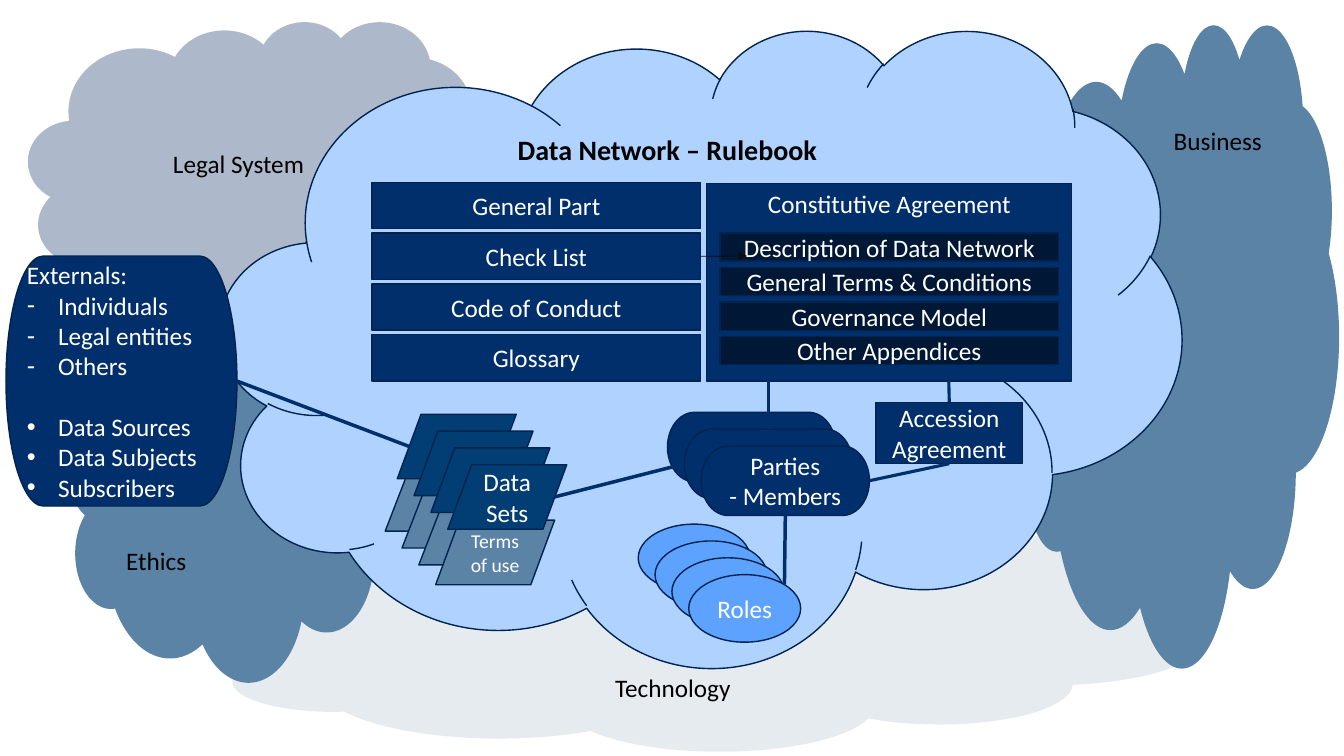
from lxml import etree
from pptx import Presentation
from pptx.dml.color import RGBColor
from pptx.enum.shapes import MSO_CONNECTOR, MSO_SHAPE
from pptx.enum.text import MSO_ANCHOR, MSO_AUTO_SIZE, PP_ALIGN
from pptx.oxml.ns import qn
from pptx.util import Inches, Pt

CLOUD, RECTANGLE, OVAL = MSO_SHAPE.CLOUD, MSO_SHAPE.RECTANGLE, MSO_SHAPE.OVAL
PROCESS, TERMINATOR = MSO_SHAPE.FLOWCHART_PROCESS, MSO_SHAPE.FLOWCHART_TERMINATOR
SHEET = MSO_SHAPE.FLOWCHART_DATA
STRAIGHT = MSO_CONNECTOR.STRAIGHT
TOP, MIDDLE, BOTTOM = MSO_ANCHOR.TOP, MSO_ANCHOR.MIDDLE, MSO_ANCHOR.BOTTOM
LEFT, CENTER, RIGHT = PP_ALIGN.LEFT, PP_ALIGN.CENTER, PP_ALIGN.RIGHT
NO_AUTOFIT = MSO_AUTO_SIZE.NONE
SIDE_TOP, SIDE_LEFT, SIDE_BOTTOM, SIDE_RIGHT = range(4)

BLACK = RGBColor(0x00, 0x00, 0x00)
WHITE = RGBColor(0xFF, 0xFF, 0xFF)
MIST = RGBColor(0xE6, 0xEB, 0xF0)
STEEL = RGBColor(0x5B, 0x83, 0xA6)
GREY_BLUE = RGBColor(0xAD, 0xB9, 0xCA)
SKY = RGBColor(0xAF, 0xD2, 0xFF)
BRIGHT_BLUE = RGBColor(0x5D, 0xA2, 0xFF)
NAVY = RGBColor(0x00, 0x2F, 0x6C)
DARK_NAVY = RGBColor(0x00, 0x17, 0x36)
SHEET_BLUE = RGBColor(0x02, 0x3E, 0x73)
OUTLINE = RGBColor(0x00, 0x23, 0x50)
ARROW = RGBColor(0x0D, 0x0D, 0x0D)

FONT = "Calibri"
STACK_SIZE, STACK_STEP = 4, 0.167


def set_attributes(target, values):
    """Set every named attribute on the target."""
    for name, value in values.items():
        setattr(target, name, value)


def write_text(shape, text, color=WHITE, size=18, align=CENTER, anchor=MIDDLE, bold=False):
    """Write one paragraph per line of text into the shape."""
    frame = shape.text_frame
    frame.text = text
    set_attributes(frame, {"word_wrap": True, "vertical_anchor": anchor})
    for paragraph in frame.paragraphs:
        paragraph.alignment = align
        set_attributes(paragraph.font, {"name": FONT, "size": Pt(size), "bold": bold})
        paragraph.font.color.rgb = color


def add_box(shapes, kind, box, fill, text="", outline=OUTLINE, **text_format):
    """Add a flat preset shape with optional text."""
    shape = shapes.add_shape(kind, *map(Inches, box))
    shape.shadow.inherit = False
    shape.fill.solid()
    shape.fill.fore_color.rgb = fill
    if outline is None:
        shape.line.fill.background()
    else:
        shape.line.color.rgb = outline
        shape.line.width = Pt(1)
    if text:
        write_text(shape, text, **text_format)
    return shape


def add_line(slide, start, end, begin=None, finish=None, color=NAVY, width=2.5):
    """Add a straight connector, joined to (shape, side) pairs where given."""
    line = slide.shapes.add_connector(STRAIGHT, *map(Inches, (*start, *end)))
    if begin:
        line.begin_connect(*begin)
    if finish:
        line.end_connect(*finish)
    line.line.color.rgb = color
    line.line.width = Pt(width)
    etree.SubElement(line.element.spPr, qn("a:effectLst"))
    return line


def add_stack(shapes, kind, box, fill, text, count=STACK_SIZE, front_height=None, size=18):
    """Add overlapping shapes stepping down and right, with text on the front one."""
    left, top, width, height = box
    stack = []
    for index in range(count):
        front = index == count - 1
        place = (left + index * STACK_STEP, top + index * STACK_STEP, width,
                 front_height if front and front_height else height)
        stack.append(add_box(shapes, kind, place, fill, text if front else "", size=size))
    return stack


def add_clouds(slide, box):
    """Add the surrounding clouds and the central one inside the box."""
    left, top = box[:2]
    clouds = [
        ((2.09, 5.27, 9.87, 2.18), MIST, "Technology", CENTER, BOTTOM),
        ((10.09, 0.23, 3.19, 6.38), STEEL, "Business", RIGHT, TOP),
        ((0.67, 2.73, 3.51, 4.03), STEEL, "Ethics", LEFT, BOTTOM),
        ((0.28, 0.21, 4.49, 2.95), GREY_BLUE, "Legal System", CENTER, MIDDLE),
    ]
    for (x, y, width, height), fill, label, align, anchor in clouds:
        cloud = add_box(slide.shapes, CLOUD, (left + x, top + y, width, height), fill, label,
                        outline=None, color=BLACK, align=align, anchor=anchor)
        if label == "Ethics":
            cloud.text_frame.margin_bottom = Inches(0.25)
    add_box(slide.shapes, CLOUD, (left + 2.18, top + 0.29, 9.54, 6.32), SKY)


def place_title(slide, box):
    """Move the title placeholder into the box, in front of the clouds."""
    title = slide.shapes.title
    set_attributes(title, dict(zip(("left", "top", "width", "height"), map(Inches, box))))
    write_text(title, "Data Network – Rulebook", BLACK, 20, anchor=TOP, bold=True)
    title.text_frame.auto_size = NO_AUTOFIT
    title.element.getparent().append(title.element)


def add_rulebook_parts(slide, box):
    """Add the column of rulebook parts and return them by name."""
    left, top, width, height = box
    names = ["General Part", "Check List", "Code of Conduct", "Glossary"]
    part_height = 0.46
    pitch = (height - part_height) / (len(names) - 1)
    return {name: add_box(slide.shapes, RECTANGLE,
                          (left, top + index * pitch, width, part_height), NAVY, name)
            for index, name in enumerate(names)}


def add_agreement(slide, box):
    """Add the constitutive agreement with its appendices."""
    left, top, width, _ = box
    add_box(slide.shapes, PROCESS, box, NAVY, "Constitutive Agreement", anchor=TOP)
    appendices = ["Description of Data Network", "General Terms & Conditions",
                  "Governance Model", "Other Appendices"]
    for index, name in enumerate(appendices):
        place = (left + 0.13, top + 0.49 + index * 0.343, width - 0.26, 0.28)
        add_box(slide.shapes, PROCESS, place, DARK_NAVY, name)


def add_externals(slide, box):
    """Add the list of external actors."""
    dashes = ["Individuals", "Legal entities", "Others"]
    dots = ["Data Sources", "Data Subjects", "Subscribers"]
    shape = add_box(slide.shapes, TERMINATOR, box, NAVY,
                    "\n".join(["Externals:", *dashes, *dots]), align=LEFT)
    paragraphs = shape.text_frame.paragraphs[1:]
    for paragraph, bullet in zip(paragraphs, "-" * len(dashes) + "•" * len(dots)):
        properties = paragraph._p.get_or_add_pPr()
        properties.set("marL", str(Inches(0.31)))
        properties.set("indent", str(-Inches(0.31)))
        etree.SubElement(properties, qn("a:buFont")).set("typeface", "Arial")
        etree.SubElement(properties, qn("a:buChar")).set("char", bullet)
        properties.append(properties.find(qn("a:defRPr")))
    paragraphs[len(dashes)].space_before = Pt(22)
    return shape


def add_data_sets(slide, box):
    """Add the stacked data sets in front of their terms of use."""
    left, top, width, height = box
    add_stack(slide.shapes, SHEET, (left - 0.12, top + 0.55, width, 0.61), STEEL,
              "Terms of use", front_height=height, size=14)
    add_stack(slide.shapes, SHEET, box, SHEET_BLUE, "Data Sets")


def add_relations(slide, parts, parties, externals, accession):
    """Add the lines between the actors, agreements and data sets."""
    front = parties[-1]
    add_line(slide, (7.62, 3.75), (7.62, 4.26))
    add_line(slide, (7.79, 5.12), (7.78, 5.8), begin=(front, SIDE_BOTTOM))
    add_line(slide, (6.79, 4.6), (5.5, 4.93), begin=(parties[1], SIDE_LEFT))
    add_line(slide, (4.06, 4.43), (2.35, 3.78), finish=(externals, SIDE_RIGHT))
    add_line(slide, (9.41, 3.99), (9.41, 3.77), begin=(accession, SIDE_TOP), width=2.25)
    add_line(slide, (9.41, 4.6), (8.62, 4.77), begin=(accession, SIDE_BOTTOM),
             finish=(front, SIDE_RIGHT), width=2.25)
    arrow = add_line(slide, (6.95, 2.54), (7.41, 2.54),
                     begin=(parts["Check List"], SIDE_RIGHT), color=ARROW, width=0.5)
    etree.SubElement(arrow.line._get_or_add_ln(), qn("a:tailEnd")).set("type", "triangle")


def main():
    """Build the rulebook slide and save it."""
    presentation = Presentation()
    presentation.slide_width, presentation.slide_height = Inches(13.33), Inches(7.5)
    slide = presentation.slides.add_slide(presentation.slide_layouts[5])
    add_clouds(slide, (0, 0, 13.33, 7.5))
    place_title(slide, (4.62, 1.26, 4, 0.45))
    parts = add_rulebook_parts(slide, (3.69, 1.81, 3.26, 1.97))
    parties = add_stack(slide.shapes.add_group_shape().shapes, TERMINATOR,
                        (6.62, 4.09, 1.67, 0.69), NAVY, "Parties\n- Members", count=3)
    add_stack(slide.shapes.add_group_shape().shapes, OVAL,
              (6.33, 5.2, 1.11, 0.67), BRIGHT_BLUE, "Roles")
    externals = add_externals(slide, (0.06, 2.54, 2.29, 2.48))
    add_data_sets(slide, (3.94, 4.11, 1.18, 0.64))
    add_agreement(slide, (7.01, 1.82, 3.62, 1.96))
    accession = add_box(slide.shapes, PROCESS, (8.69, 3.99, 1.45, 0.61), NAVY,
                        "Accession Agreement")
    add_relations(slide, parts, parties, externals, accession)
    presentation.save("out.pptx")


if __name__ == "__main__":
    main()
